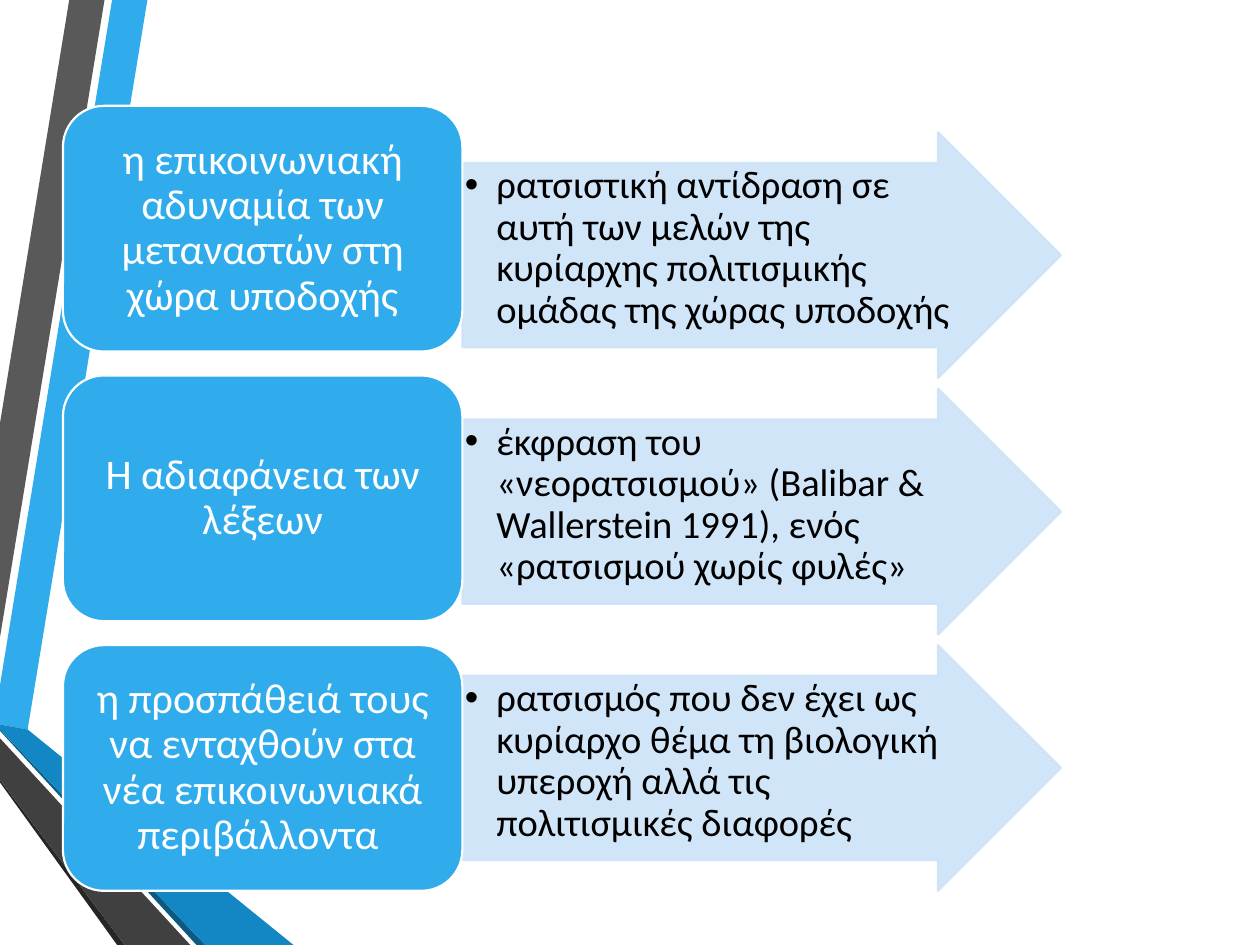
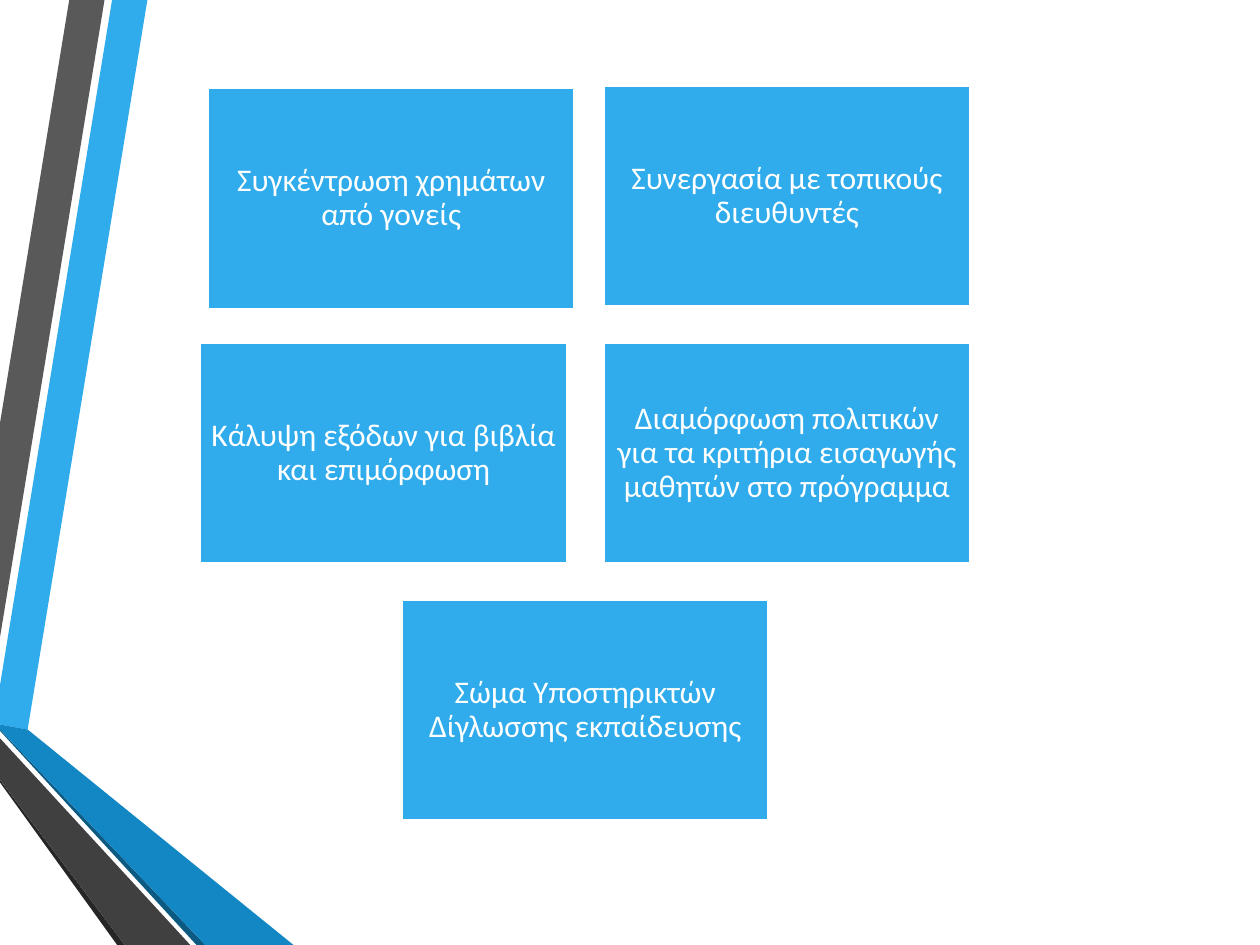
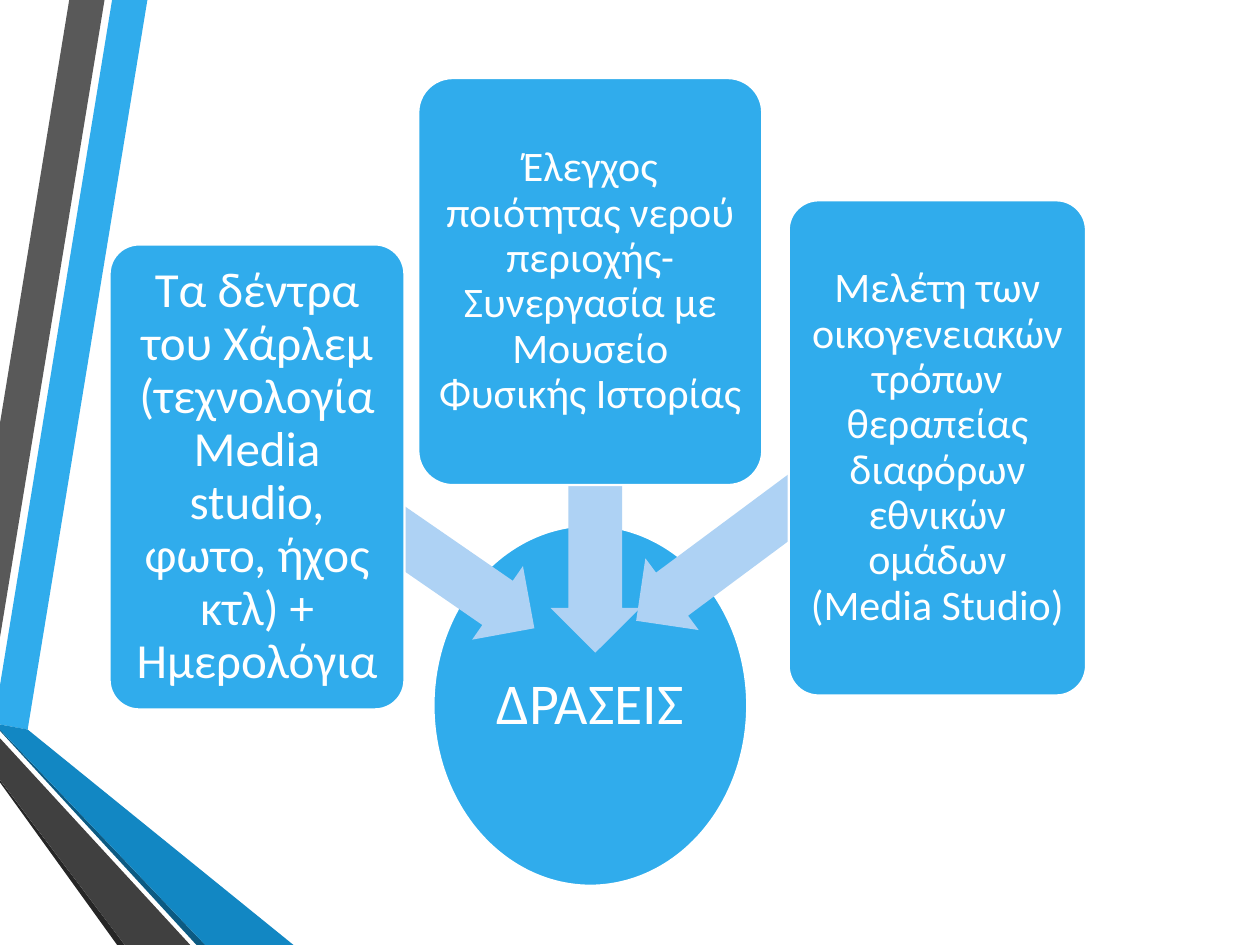
import lxml.etree
import pptx
import pptx.dml.color
import pptx.enum.shapes
import pptx.enum.text
import pptx.oxml.ns
import pptx.util

RGBColor = pptx.dml.color.RGBColor
SHAPE = pptx.enum.shapes.MSO_SHAPE
ANCHOR = pptx.enum.text.MSO_ANCHOR
ALIGN = pptx.enum.text.PP_ALIGN

# Shared colours and font
BLUE = RGBColor(0x30, 0xAC, 0xEC)
MID_BLUE = RGBColor(0x12, 0x87, 0xC3)
DEEP_BLUE = RGBColor(0x0C, 0x5A, 0x82)
PALE_BLUE = RGBColor(0xCD, 0xE3, 0xF8)
ARROW_BLUE = RGBColor(0xAE, 0xD2, 0xF4)
GREY = RGBColor(0x59, 0x59, 0x59)
DARK_GREY = RGBColor(0x40, 0x40, 0x40)
NEAR_BLACK = RGBColor(0x26, 0x26, 0x26)
WHITE = RGBColor(0xFF, 0xFF, 0xFF)
BLACK = RGBColor(0x00, 0x00, 0x00)
FONT = "Calibri"

# Grid of 100 columns by 75 rows
WIDTH, HEIGHT = pptx.util.Inches(10), pptx.util.Inches(7.5)
COLUMN, ROW = WIDTH / 100, HEIGHT / 75

# Ribbon outlines, in tenths of a column and of a row
RIBBONS = [
    (BLUE, [(0, 544), (0, 575), (22, 579), (117, 0), (89, 0)]),
    (GREY, [(83, 0), (55, 0), (0, 336), (0, 506)]),
    (NEAR_BLACK, [(0, 619), (0, 621), (93, 750), (99, 750)]),
    (DEEP_BLUE, [(0, 579), (0, 580), (156, 750), (163, 750)]),
    (MID_BLUE, [(0, 579), (163, 750), (233, 750), (22, 579), (0, 575)]),
    (DARK_GREY, [(0, 619), (99, 750), (151, 750), (0, 586)]),
]

CAUSES = [
    ("η επικοινωνιακή αδυναμία των μεταναστών στη χώρα υποδοχής",
     "ρατσιστική αντίδραση σε αυτή των μελών της κυρίαρχης πολιτισμικής "
     "ομάδας της χώρας υποδοχής"),
    ("Η αδιαφάνεια των λέξεων",
     "έκφραση του «νεορατσισμού» (Balibar & Wallerstein 1991), ενός "
     "«ρατσισμού χωρίς φυλές»"),
    ("η προσπάθειά τους να ενταχθούν στα νέα επικοινωνιακά περιβάλλοντα ",
     "ρατσισμός που δεν έχει ως κυρίαρχο θέμα τη βιολογική υπεροχή αλλά τις "
     "πολιτισμικές διαφορές"),
]

# Left column, top row, wording
SUPPORT_TASKS = [
    (16.5, 7, "Συγκέντρωση χρημάτων από γονείς"),
    (47.9, 6.8, "Συνεργασία με τοπικούς διευθυντές"),
    (15.9, 27.2, "Κάλυψη εξόδων για βιβλία και επιμόρφωση"),
    (47.9, 27.2, "Διαμόρφωση πολιτικών για τα κριτήρια εισαγωγής μαθητών "
                 "στο πρόγραμμα"),
    (31.9, 47.6, "Σώμα Υποστηρικτών Δίγλωσσης εκπαίδευσης"),
]

# Arrow area, arrow rotation, card area, text size, margin, wording
ACTIONS = [
    ((26, 41.2, 18, 7.1), 214.6, (8.7, 19.4, 23.4, 36.9), 28, 0.06,
     "Τα δέντρα του Χάρλεμ (τεχνολογία Media studio, φωτο, ήχος κτλ) + "
     "Ημερολόγια"),
    ((38.1, 39.1, 18.3, 7.1), 270, (33.2, 6.2, 27.3, 32.3), 24, 0.05,
     "Έλεγχος ποιότητας νερού περιοχής-Συνεργασία με Μουσείο Φυσικής "
     "Ιστορίας "),
    ((48.5, 39.7, 20.2, 7.1), 323.4, (62.6, 15.9, 23.6, 39.3), 24, 0.05,
     "Μελέτη των οικογενειακών τρόπων θεραπείας διαφόρων εθνικών ομάδων "
     "(Media Studio)"),
]


def set_all(target, **values):
    for attribute, value in values.items():
        setattr(target, attribute, value)


def make_translucent(fill_format, percent):
    for color in fill_format.iter(pptx.oxml.ns.qn("a:srgbClr")):
        alpha = lxml.etree.SubElement(color, pptx.oxml.ns.qn("a:alpha"))
        alpha.set("val", str(percent * 1000))


def add_block(slide, kind, area, fill, outline=None, adjustments=()):
    """Add a flat preset shape; area is left, top, columns, rows."""
    left, top, columns, rows = area
    block = slide.shapes.add_shape(
        kind, round(left * COLUMN), round(top * ROW),
        round(columns * COLUMN), round(rows * ROW))
    block.shadow.inherit = False
    block.fill.solid()
    block.fill.fore_color.rgb = fill
    if outline is None:
        block.line.fill.background()
    else:
        block.line.color.rgb = outline
        block.line.width = pptx.util.Pt(1.25)
    for index, value in enumerate(adjustments):
        block.adjustments[index] = value
    return block


def write(block, wording, size, color=WHITE, align=ALIGN.CENTER,
          anchor=ANCHOR.MIDDLE, margins=(0.05, 0.05)):
    side, end = map(pptx.util.Inches, margins)
    frame = block.text_frame
    set_all(frame, word_wrap=True, vertical_anchor=anchor, margin_left=side,
            margin_right=side, margin_top=end, margin_bottom=end)
    paragraph = frame.paragraphs[0]
    set_all(paragraph, text=wording, alignment=align, line_spacing=0.9)
    set_all(paragraph.runs[0].font, name=FONT, size=pptx.util.Pt(size))
    paragraph.runs[0].font.color.rgb = color
    return paragraph


def add_bullet(paragraph):
    properties = paragraph._p.get_or_add_pPr()
    hang = pptx.util.Inches(0.25)
    properties.set("marL", str(hang))
    properties.set("indent", str(-hang))
    for tag, key, value in (("a:buFont", "typeface", "Arial"),
                            ("a:buChar", "char", "•")):
        mark = lxml.etree.SubElement(properties, pptx.oxml.ns.qn(tag))
        mark.set(key, value)


def add_ribbons(slide):
    """Draw the ribbons and hand them to the layout all slides share."""
    layout_tree = slide.slide_layout.element.cSld.spTree
    for color, (start, *corners) in RIBBONS:
        builder = slide.shapes.build_freeform(
            *start, scale=(COLUMN / 10, ROW / 10))
        builder.add_line_segments(corners, close=True)
        ribbon = builder.convert_to_shape()
        ribbon.shadow.inherit = False
        ribbon.fill.solid()
        ribbon.fill.fore_color.rgb = color
        ribbon.line.fill.background()
        layout_tree.append(ribbon.element)


def add_causes(slide):
    for row, (cause, effect) in enumerate(CAUSES):
        arrow = add_block(slide, SHAPE.RIGHT_ARROW,
                          (36.7, 10.5 + 20.35 * row, 47.5, 19.5),
                          PALE_BLUE, PALE_BLUE, (0.75, 0.5))
        make_translucent(arrow.element.spPr, 90)
        add_bullet(write(arrow, effect, 22, BLACK, ALIGN.LEFT, ANCHOR.TOP,
                         (0.02, 0.02)))
        card = add_block(slide, SHAPE.ROUNDED_RECTANGLE,
                         (5, 8.4 + 21.4 * row, 31.7, 19.5), BLUE, WHITE)
        write(card, cause, 24, margins=(0.1, 0.05))


def add_support_tasks(slide):
    for left, top, task in SUPPORT_TASKS:
        card = add_block(slide, SHAPE.RECTANGLE, (left, top, 29.1, 17.5),
                         BLUE, WHITE)
        write(card, task, 18, margins=(0.07, 0.07))


def add_actions(slide):
    hub = add_block(slide, SHAPE.OVAL, (34.4, 41.7, 24.9, 28.6), BLUE, WHITE)
    write(hub, "ΔΡΑΣΕΙΣ", 33, margins=(0.02, 0.02))
    for arrow_area, rotation, card_area, size, margin, action in ACTIONS:
        arrow = add_block(slide, SHAPE.LEFT_ARROW, arrow_area, ARROW_BLUE,
                          adjustments=(0.6, 0.5))
        arrow.rotation = rotation
        card = add_block(slide, SHAPE.ROUNDED_RECTANGLE, card_area, BLUE,
                         WHITE, (0.1,))
        write(card, action, size, margins=(margin, margin))


def main():
    deck = pptx.Presentation()
    set_all(deck, slide_width=WIDTH, slide_height=HEIGHT)
    blank = deck.slide_layouts[6]
    causes, tasks, actions = (deck.slides.add_slide(blank) for _ in range(3))
    add_ribbons(causes)
    add_causes(causes)
    add_support_tasks(tasks)
    add_actions(actions)
    deck.save("out.pptx")


if __name__ == "__main__":
    main()
